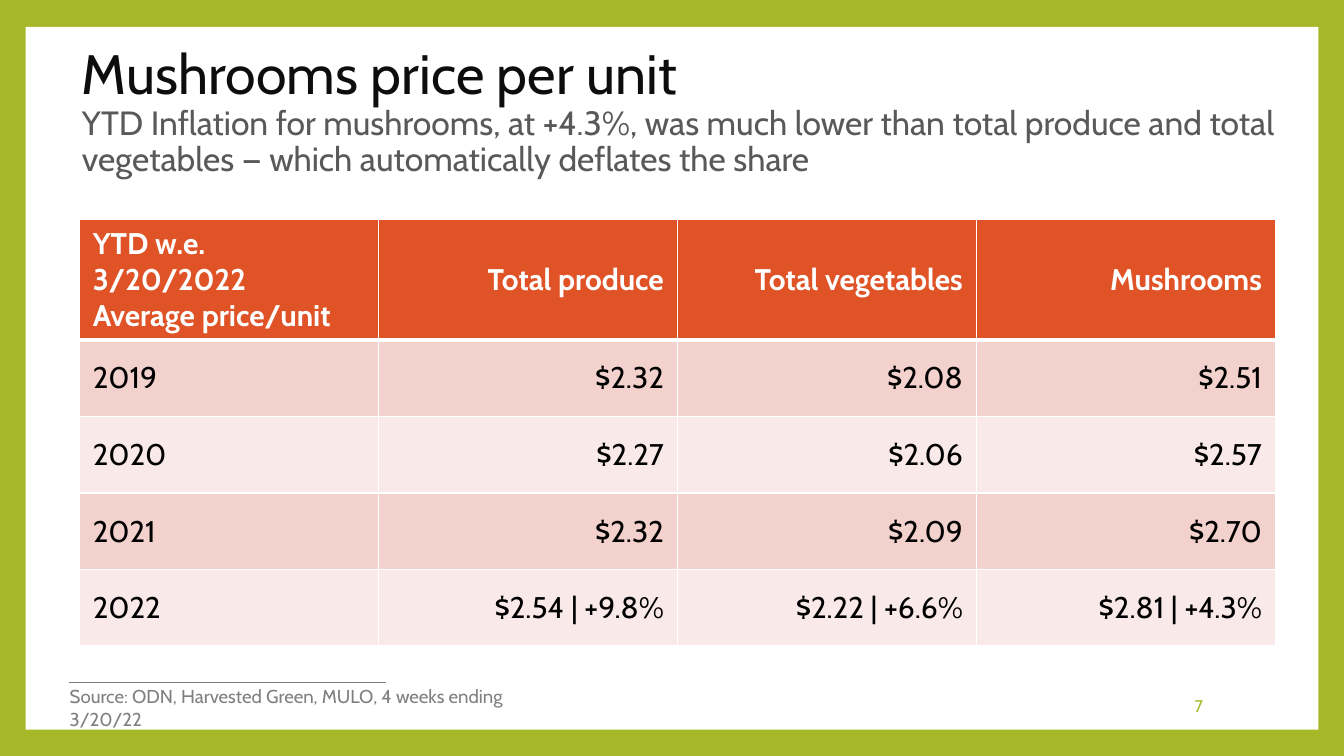
from dataclasses import dataclass

from lxml.etree import SubElement
from pptx import Presentation
from pptx.dml.color import RGBColor
from pptx.enum.shapes import MSO_CONNECTOR, MSO_SHAPE
from pptx.enum.text import MSO_ANCHOR, MSO_AUTO_SIZE, PP_ALIGN
from pptx.oxml.ns import qn
from pptx.util import Inches, Pt


@dataclass(frozen=True)
class Theme:
    font: str = "Cabin"
    green: str = "A6B727"
    white: str = "FFFFFF"
    black: str = "000000"
    title: str = "0D0D0D"
    subtitle: str = "595959"
    gray: str = "808080"
    header: str = "DF5327"
    bands: tuple = ("F3D1CD", "F9E9E8")
    title_size: float = 29.7
    subtitle_size: float = 18
    table_size: float = 16
    source_size: float = 10
    number_size: float = 9


theme = Theme()


def style(r, size, color, bold=False):
    r.font.name = theme.font
    r.font.size = Pt(size)
    r.font.bold = bold
    r.font.color.rgb = RGBColor.from_string(color)


def set_borders(cell, bottom):
    tc_pr = cell._tc.get_or_add_tcPr()
    for i, (side, width) in enumerate((("L", 1), ("R", 1), ("T", 1), ("B", bottom))):
        ln = SubElement(tc_pr, qn(f"a:ln{side}"), w=str(Pt(width)))
        fill = SubElement(ln, qn("a:solidFill"))
        SubElement(fill, qn("a:srgbClr"), val=theme.white)
        tc_pr.insert(i, ln)


prs = Presentation()
prs.slide_width = Inches(10)
prs.slide_height = Inches(10) * 9 // 16
s = prs.slides.add_slide(prs.slide_layouts[5])
s.background.fill.solid()
s.background.fill.fore_color.rgb = RGBColor.from_string(theme.green)

panel = s.shapes.add_shape(MSO_SHAPE.RECTANGLE, Inches(0.19), Inches(0.2), Inches(9.62), Inches(5.23))
panel.shadow.inherit = False
panel.fill.solid()
panel.fill.fore_color.rgb = RGBColor.from_string(theme.white)
panel.line.fill.background()
s.shapes._spTree.insert(2, panel._element)

rule = s.shapes.add_connector(MSO_CONNECTOR.STRAIGHT, Inches(0.51), Inches(5.08), Inches(2.87), Inches(5.08))
rule.line.color.rgb = RGBColor.from_string(theme.gray)
rule.line.width = Pt(0.79)
SubElement(rule._element.spPr, qn("a:effectLst"))

title = s.shapes.title
title.left, title.top, title.width, title.height = Inches(0.51), Inches(0.57), Inches(9.43), Inches(0.54)
tf = title.text_frame
tf.word_wrap = True
tf.auto_size = MSO_AUTO_SIZE.NONE
tf.vertical_anchor = MSO_ANCHOR.MIDDLE
tf.text = (
    "Mushrooms price per unit\v"
    "YTD Inflation for mushrooms, at +4.3%, was much lower than total produce "
    "and total vegetables — which automatically deflates the share"
)
p = tf.paragraphs[0]
p.alignment = PP_ALIGN.LEFT
p.line_spacing = 0.9
style(p.runs[0], theme.title_size, theme.title)
style(p.runs[1], theme.subtitle_size, theme.subtitle)
SubElement(p._p.find(qn("a:br")), qn("a:rPr"), sz=str(round(theme.title_size * 100)))

number = s.shapes.add_textbox(Inches(7.65), Inches(5.1), Inches(1.4), Inches(0.3))
tf = number.text_frame
tf.word_wrap = True
tf.vertical_anchor = MSO_ANCHOR.MIDDLE
tf.text = "7"
p = tf.paragraphs[0]
p.alignment = PP_ALIGN.RIGHT
style(p.runs[0], theme.number_size, theme.green)

source = s.shapes.add_textbox(Inches(0.42), Inches(5.05), Inches(3.71), Inches(0.27))
tf = source.text_frame
tf.word_wrap = True
tf.text = "Source: ODN, Harvested Green, MULO, 4 weeks ending 3/20/22"
style(tf.paragraphs[0].runs[0], theme.source_size, theme.gray)

rows = [
    ("YTD w.e. 3/20/2022\nAverage price/unit", "Total produce", "Total vegetables", "Mushrooms"),
    ("2019", "$2.32", "$2.08", "$2.51"),
    ("2020", "$2.27", "$2.06", "$2.57"),
    ("2021", "$2.32", "$2.09", "$2.70"),
    ("2022", "$2.54 | +9.8%", "$2.22 | +6.6%", "$2.81 | +4.3%"),
]
table = s.shapes.add_table(
    len(rows), len(rows[0]), Inches(0.59), Inches(1.63), Inches(8.9), Inches(0.57 * len(rows))
).table
for i, row in enumerate(rows):
    is_header = i == 0
    for j, text in enumerate(row):
        cell = table.cell(i, j)
        cell.vertical_anchor = MSO_ANCHOR.MIDDLE
        cell.fill.solid()
        fill = theme.header if is_header else theme.bands[(i - 1) % 2]
        cell.fill.fore_color.rgb = RGBColor.from_string(fill)
        set_borders(cell, 3 if is_header else 1)
        cell.text_frame.text = text
        for p in cell.text_frame.paragraphs:
            p.alignment = PP_ALIGN.RIGHT if j else PP_ALIGN.LEFT
            style(p.runs[0], theme.table_size, theme.white if is_header else theme.black, is_header)

prs.save("out.pptx")
